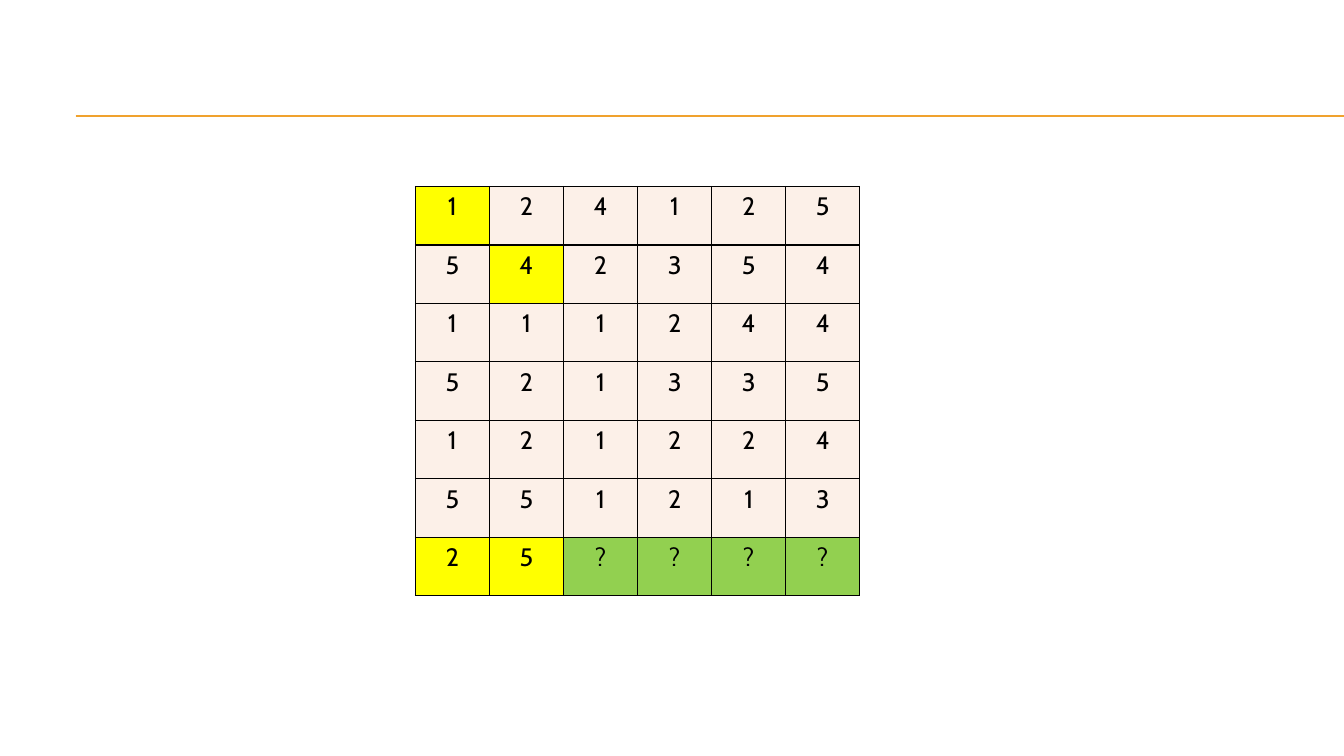
from dataclasses import dataclass

from lxml import etree
from pptx import Presentation, util as u
from pptx.dml.color import RGBColor
from pptx.enum import shapes, text
from pptx.oxml.ns import qn

COLORS = {
    "rule": "F0A22E",
    "border": "000000",
    "ink": "000000",
    "plain": "FCF0E8",
    "marked": "FFFF00",
    "unknown": "92D050",
}
FONT = "Cabin"
NUMBERS = ["124125", "542354", "111244", "521335", "121224", "551213", "25????"]
MARKED = {(0, 0), (1, 1), (6, 0), (6, 1)}
OUTLINED = (1, 1)
GRID_LEFT, GRID_TOP, GRID_WIDTH, GRID_HEIGHT = 4.12, 1.85, 4.41, 4.06


@dataclass(frozen=True)
class Rule:
    left: float
    right: float
    y: float


HEADER_RULES = [Rule(0.75, 13.33, 1.15), Rule(0.75, 13.33, 1.16)]


def add_line_fill(line, color: str) -> None:
    fill = etree.SubElement(line, qn("a:solidFill"))
    etree.SubElement(fill, qn("a:srgbClr"), val=color)


def draw_rule(slide, rule: Rule) -> None:
    line = slide.shapes.add_connector(
        shapes.MSO_CONNECTOR.STRAIGHT,
        u.Inches(rule.left), u.Inches(rule.y), u.Inches(rule.right), u.Inches(rule.y),
    )
    line.line.color.rgb = RGBColor.from_string(COLORS["rule"])
    line.line.width = u.Pt(0.75)
    etree.SubElement(line._element.spPr, qn("a:effectLst"))


def write(frame, content: str, *, size: float = 18, color: str = COLORS["ink"],
          align=text.PP_ALIGN.CENTER, outline: str | None = None) -> None:
    paragraph = frame.paragraphs[0]
    paragraph.alignment = align
    run = paragraph.add_run()
    run.text = content
    run.font.name = FONT
    run.font.size = u.Pt(size)
    run.font.color.rgb = RGBColor.from_string(color)
    if outline:
        edge = etree.Element(qn("a:ln"), w=str(u.Pt(0.75)))
        add_line_fill(edge, outline)
        run.font._element.insert(0, edge)


def add_borders(cell) -> None:
    """Put the four borders before the cell's fill, as the schema requires."""
    properties = cell._tc.get_or_add_tcPr()
    for position, side in enumerate(("lnL", "lnR", "lnT", "lnB")):
        border = etree.Element(qn(f"a:{side}"), w=str(u.Pt(1)))
        add_line_fill(border, COLORS["border"])
        properties.insert(position, border)


def cell_color(row: int, column: int, content: str) -> str:
    if content == "?":
        return COLORS["unknown"]
    return COLORS["marked" if (row, column) in MARKED else "plain"]


def draw_number_grid(slide) -> None:
    row_count, column_count = len(NUMBERS), len(NUMBERS[0])
    grid = slide.shapes.add_table(
        row_count, column_count, u.Inches(GRID_LEFT), u.Inches(GRID_TOP),
        u.Inches(GRID_WIDTH), u.Inches(GRID_HEIGHT),
    ).table
    grid.first_row = grid.horz_banding = False
    for row, numbers in enumerate(NUMBERS):
        for column, number in enumerate(numbers):
            cell = grid.cell(row, column)
            cell.fill.solid()
            cell.fill.fore_color.rgb = RGBColor.from_string(cell_color(row, column, number))
            add_borders(cell)
            outline = COLORS["marked"] if (row, column) == OUTLINED else None
            write(cell.text_frame, number, outline=outline)


def main() -> None:
    deck = Presentation()
    deck.slide_width, deck.slide_height = u.Inches(13.33), u.Inches(7.5)
    slide = deck.slides.add_slide(deck.slide_layouts[6])
    for rule in HEADER_RULES:
        draw_rule(slide, rule)
    draw_number_grid(slide)
    deck.save("out.pptx")


if __name__ == "__main__":
    main()
